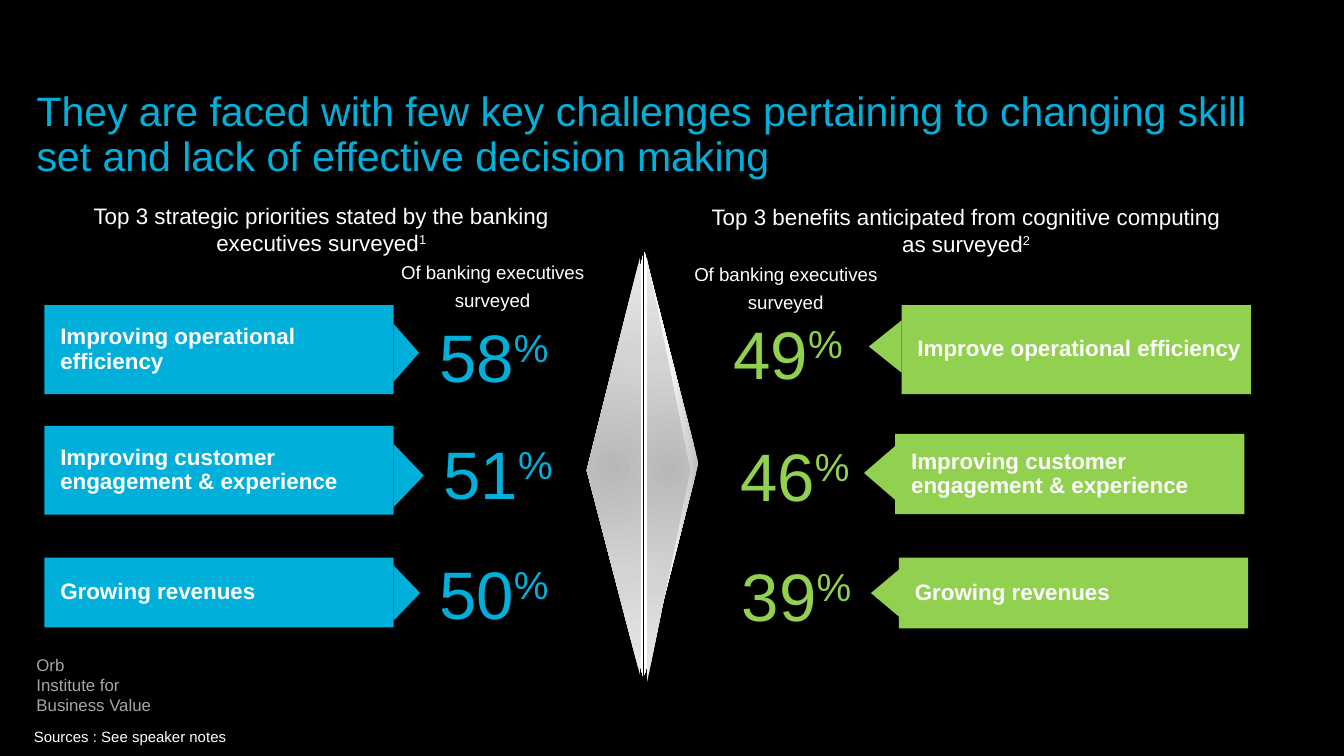
from lxml import etree
from pptx import Presentation
from pptx import util as u
from pptx.dml.color import RGBColor
from pptx.enum import shapes, text
from pptx.oxml import ns

BLACK = RGBColor(0x00, 0x00, 0x00)
WHITE = RGBColor(0xFF, 0xFF, 0xFF)
GREY = RGBColor(0xA6, 0xA6, 0xA6)
BLUE = RGBColor(0x00, 0xB0, 0xDA)
GREEN = RGBColor(0x92, 0xD0, 0x50)

EDGE_STOPS = ("BFBFBF", "F2F2F2", "FFFFFF")
FACE_STOPS = ("B8B8B8", "D3D3D3", "E9E9E9")
EDGE_SHADE = '<a:lin ang="5400000" scaled="0"/>'
FACE_SHADE = ('<a:path path="circle"><a:fillToRect l="50000" t="50000" '
              'r="50000" b="50000"/></a:path>')

BAR_WIDTH = 6.6
PRIORITIES = [
    ("Improving operational efficiency", (0.84, 5.77, 1.68),
     (6.67, 0.48, 1.09), "58", (8.05, 5.84)),
    ("Improving customer engagement & experience", (0.84, 8.05, 1.68),
     (8.99, 0.57, 1.19), "51", (8.13, 8.05)),
    ("Growing revenues", (0.84, 10.54, 1.32),
     (11.21, 0.5, 1.04), "50", (8.05, 10.31)),
]
BENEFITS = [
    ("Improve operational efficiency", (17.04, 5.77, 1.68),
     (6.55, 0.62, 0.99), "49", (13.61, 5.77)),
    ("Improving customer engagement & experience", (16.92, 8.2, 1.52),
     (8.94, 0.59, 1.02), "46", (13.74, 8.08)),
    ("Growing revenues", (16.99, 10.54, 1.34),
     (11.21, 0.53, 0.89), "39", (13.77, 10.36)),
]


def lengths(*values):
    """Turn centimetres into slide lengths."""
    return [u.Cm(value) for value in values]


def set_margins(frame, left, top, right, bottom):
    """Set the inner margins of a text frame in centimetres."""
    frame.margin_left, frame.margin_top, frame.margin_right, frame.margin_bottom = (
        lengths(left, top, right, bottom))


def style(paragraph, size, colour, bold=False):
    """Format every run of a paragraph."""
    for run in paragraph.runs:
        run.font.name = "Arial"
        run.font.size = u.Pt(size)
        run.font.bold = bold
        run.font.color.rgb = colour


def add_caption(slide, box, wording, size, colour, raised="", centred=False):
    """Add wrapped text, with an optional superscript ending, and return its frame."""
    frame = slide.shapes.add_textbox(*lengths(*box)).text_frame
    frame.word_wrap = True
    frame.text = wording
    if raised:
        ending = frame.paragraphs[0].add_run()
        ending.text = raised
        ending._r.get_or_add_rPr().set("baseline", "30000")
    for paragraph in frame.paragraphs:
        paragraph.alignment = text.PP_ALIGN.CENTER if centred else text.PP_ALIGN.LEFT
        style(paragraph, size, colour)
    return frame


def add_plain_shape(slide, kind, box):
    """Add a preset shape without outline or shadow."""
    shape = slide.shapes.add_shape(kind, *lengths(*box))
    shape.shadow.inherit = False
    shape.line.fill.background()
    return shape


def add_triangle(slide, box, points_right):
    """Add a triangle that fills the box and points sideways."""
    left, top, width, height = box
    turned = (left + (width - height) / 2, top + (height - width) / 2, height, width)
    triangle = add_plain_shape(slide, shapes.MSO_SHAPE.ISOSCELES_TRIANGLE, turned)
    triangle.rotation = 90 if points_right else 270
    return triangle


def fill_gradient(shape, stops, shade):
    """Fill a shape with evenly spaced gradient stops."""
    shape.fill.background()
    marks = "".join(f'<a:gs pos="{i * 50000}"><a:srgbClr val="{stop}"/></a:gs>'
                    for i, stop in enumerate(stops))
    gradient = etree.fromstring(
        f'<a:gradFill {ns.nsdecls("a")} rotWithShape="1">'
        f'<a:gsLst>{marks}</a:gsLst>{shade}</a:gradFill>')
    properties = shape._element.spPr
    properties.replace(properties.find(ns.qn("a:noFill")), gradient)


def add_title(slide, box, wording):
    """Place and format the title."""
    title = slide.shapes.title
    title.left, title.top, title.width, title.height = lengths(*box)
    frame = title.text_frame
    frame.text = wording
    frame.word_wrap = True
    frame.auto_size = text.MSO_AUTO_SIZE.NONE
    frame.vertical_anchor = text.MSO_ANCHOR.TOP
    set_margins(frame, 0, 0.13, 0, 0)
    heading = frame.paragraphs[0]
    heading.alignment = text.PP_ALIGN.LEFT
    heading.line_spacing = 0.9
    heading.space_before = u.Pt(0)
    style(heading, 22, BLUE)


def add_bar(slide, box, wording, colour, arrow, points_right):
    """Add a labelled bar with an arrow on its inner side."""
    left, _, width, _ = box
    bar = add_plain_shape(slide, shapes.MSO_SHAPE.RECTANGLE, box)
    frame = bar.text_frame
    frame.text = wording
    frame.word_wrap = True
    frame.vertical_anchor = text.MSO_ANCHOR.MIDDLE
    set_margins(frame, 0.3, 0.13, 0.13, 0.13)
    label = frame.paragraphs[0]
    label.alignment = text.PP_ALIGN.LEFT
    label.line_spacing = 0.9
    style(label, 12, WHITE, bold=True)

    middle, length, span = arrow
    base = left + width if points_right else left - length
    tip = add_triangle(slide, (base, middle - span / 2, length, span), points_right)
    for part in (bar, tip):
        part.fill.solid()
        part.fill.fore_color.rgb = colour


def add_survey(slide, rows, colour, points_right):
    """Add the bars and percentages of one survey."""
    for wording, (left, top, height), arrow, share, place in rows:
        add_bar(slide, (left, top, BAR_WIDTH, height), wording, colour, arrow,
                points_right)
        add_caption(slide, (*place, 2.95, 1.8), share, 36, colour, raised="%")


def add_survey_heading(slide, box, wording, note, basis_box):
    """Add the heading of a survey and the basis of its percentages."""
    add_caption(slide, box, wording, 12, WHITE, raised=note, centred=True)
    basis = add_caption(slide, basis_box, "Of banking executives surveyed", 10,
                        WHITE, centred=True)
    basis.paragraphs[0].line_spacing = u.Pt(15)


def add_divider(slide, box):
    """Add the faceted diamond between the surveys."""
    left, top, _, height = box
    facets = [
        (0.43, 0, 1.02, True, EDGE_STOPS, EDGE_SHADE),
        (0.05, 0.05, 1.02, False, EDGE_STOPS, EDGE_SHADE),
        (0.48, 0.13, 0.81, True, FACE_STOPS, FACE_SHADE),
        (0, 0.05, 1.02, False, FACE_STOPS, FACE_SHADE),
    ]
    for right, down, width, points_right, stops, shade in facets:
        start = left + right + (0.66 if points_right else 0)
        facet = add_triangle(slide, (start, top + down, width, height), points_right)
        fill_gradient(facet, stops, shade)
    facet.adjustments[0] = 0.49


def add_footer(slide, box):
    """Add the publisher and the sources line."""
    left, top, width, height = box
    publisher = add_caption(slide, (left + 0.05, top, 4.37, 1.22),
                            "Orb\nInstitute for\nBusiness Value", 9, GREY)
    sources = add_caption(slide, (left, top + height - 0.33, width, 0.33),
                          "Sources : See speaker notes", 8, WHITE)
    sources.vertical_anchor = text.MSO_ANCHOR.BOTTOM
    for frame in (publisher, sources):
        set_margins(frame, 0, 0, 0, 0)


def main():
    """Build the slide and save it."""
    deck = Presentation()
    deck.slide_width, deck.slide_height = lengths(25.4, 14.29)
    slide = deck.slides.add_slide(deck.slide_layouts[5])
    slide.background.fill.solid()
    slide.background.fill.fore_color.rgb = BLACK

    add_title(slide, (0.69, 1.6, 23.98, 1.19),
              "They are faced with few key challenges pertaining to changing "
              "skill set and lack of effective decision making")
    add_survey_heading(slide, (0.51, 3.7, 11.13, 1.27),
                       "Top 3 strategic priorities stated by the banking "
                       "executives surveyed", "1", (6.96, 4.7, 4.7, 1.32))
    add_survey_heading(slide, (13.03, 3.71, 10.46, 1.27),
                       "Top 3 benefits anticipated from cognitive computing "
                       "as surveyed", "2", (12.5, 4.73, 4.7, 1.27))
    add_survey(slide, PRIORITIES, BLUE, points_right=True)
    add_survey(slide, BENEFITS, GREEN, points_right=False)
    add_divider(slide, (11.09, 4.76, 2.11, 8))
    add_footer(slide, (0.64, 12.37, 22.76, 1.73))
    deck.save("out.pptx")


if __name__ == "__main__":
    main()
